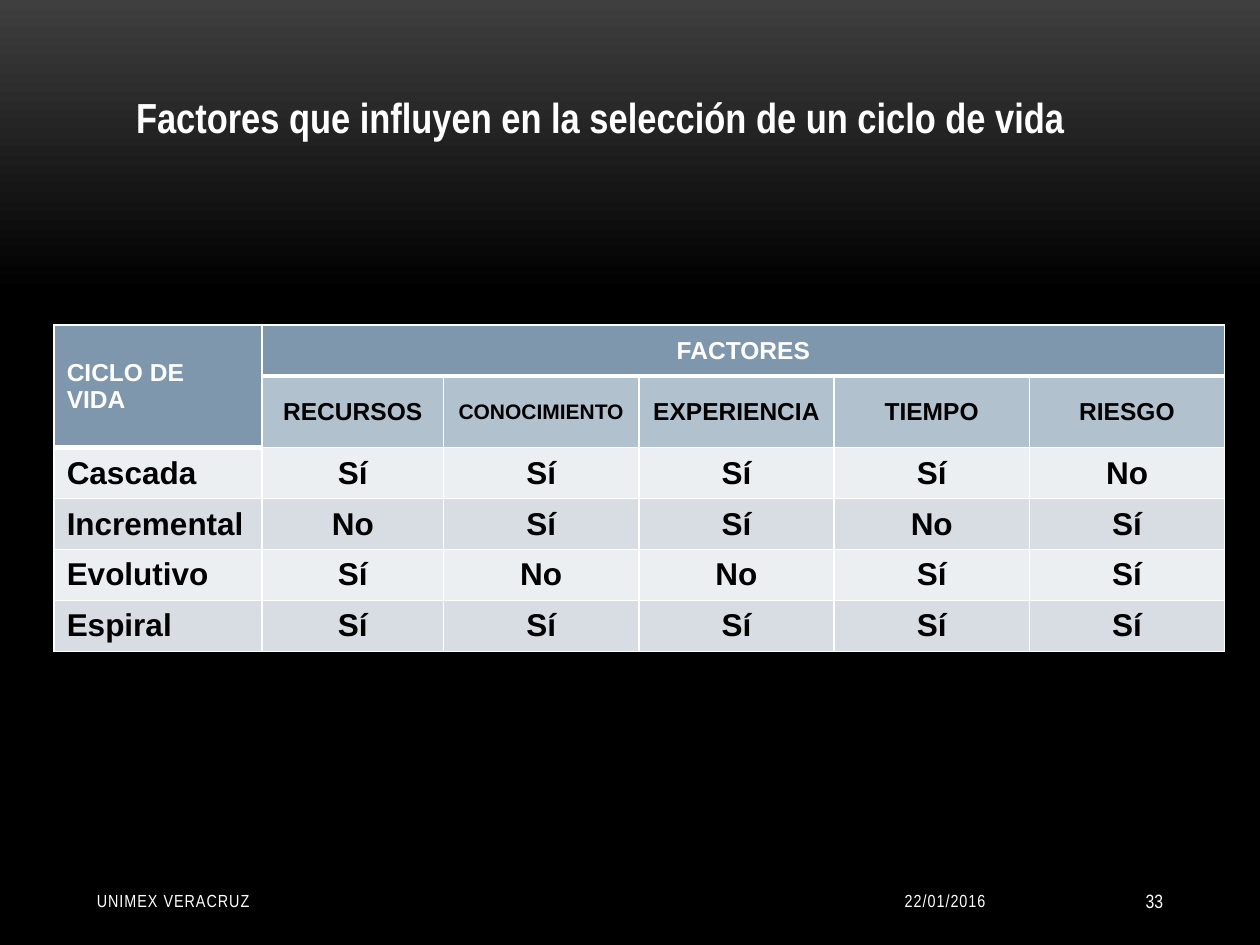
from lxml.etree import SubElement
from pptx import Presentation
from pptx.dml.color import RGBColor
from pptx.enum.text import MSO_ANCHOR, MSO_AUTO_SIZE, PP_ALIGN
from pptx.oxml.ns import qn
from pptx.util import Inches, Pt

COLORS = {
    "white": "FFFFFF",
    "black": "000000",
    "glow": "3F3F3F",
    "header": "7E97AD",
    "subheader": "B2C1CE",
    "light": "ECEFF1",
    "dark": "D8DDE3",
}
FACTORS = ["RECURSOS", "CONOCIMIENTO", "EXPERIENCIA", "TIEMPO", "RIESGO"]
LIFE_CYCLES = [
    ["Cascada", "Sí", "Sí", "Sí", "Sí", "No"],
    ["Incremental", "No", "Sí", "Sí", "No", "Sí"],
    ["Evolutivo", "Sí", "No", "No", "Sí", "Sí"],
    ["Espiral", "Sí", "Sí", "Sí", "Sí", "Sí"],
]
COLUMN_WIDTHS = [1.65, 1.44, 1.55, 1.55, 1.55, 1.55]


def rgb(name):
    return RGBColor.from_string(COLORS[name])


def write(frame, text, font_name, size, color, bold=False, align=PP_ALIGN.LEFT):
    frame.text = text
    paragraph = frame.paragraphs[0]
    paragraph.alignment = align
    font = paragraph.runs[0].font
    font.name = font_name
    font.size = Pt(size)
    font.bold = bold
    font.color.rgb = rgb(color)
    return font


def paint_background(slide):
    fill = slide.background.fill
    fill.gradient()
    fill.gradient_angle = 270
    for stop, (position, color) in zip(fill.gradient_stops, [(0, "glow"), (0.31, "black")]):
        stop.position = position
        stop.color.rgb = rgb(color)


def place_title(slide, left, top, width, height):
    title = slide.shapes.title
    title.left, title.top, title.width, title.height = map(Inches, (left, top, width, height))
    frame = title.text_frame
    frame.word_wrap = True
    frame.auto_size = MSO_AUTO_SIZE.SHAPE_TO_FIT_TEXT
    frame.vertical_anchor = MSO_ANCHOR.TOP
    write(frame, "Factores que influyen en la selección de un ciclo de vida",
          "Arial Narrow", 24, "white", bold=True)


def add_borders(cell, top_width, bottom_width):
    properties = cell._tc.get_or_add_tcPr()
    for side, width in (("L", 1), ("R", 1), ("T", top_width), ("B", bottom_width)):
        line = SubElement(properties, qn(f"a:ln{side}"), w=str(Pt(width)))
        solid = SubElement(line, qn("a:solidFill"))
        SubElement(solid, qn("a:srgbClr"), val=COLORS["white"])


def cell_style(row, column):
    if row == 0 or (row == 1 and column == 0):
        return "header", "white", 14
    if row == 1:
        return "subheader", "black", 12 if FACTORS[column - 1] == "CONOCIMIENTO" else 14
    return ("light", "dark")[row % 2], "black", 18


def place_factor_table(slide, left, top, width, height):
    rows = [["CICLO DE VIDA", "FACTORES", "", "", "", ""], ["", *FACTORS], *LIFE_CYCLES]
    table = slide.shapes.add_table(
        len(rows), len(COLUMN_WIDTHS), *map(Inches, (left, top, width, height))).table
    for column, column_width in zip(table.columns, COLUMN_WIDTHS):
        column.width = Inches(column_width)
    for r, labels in enumerate(rows):
        for c, label in enumerate(labels):
            cell = table.cell(r, c)
            header_end = 1 if c == 0 else 0
            add_borders(cell, 3 if r == header_end + 1 else 1, 3 if r == header_end else 1)
            background, color, size = cell_style(r, c)
            cell.fill.solid()
            cell.fill.fore_color.rgb = rgb(background)
            cell.vertical_anchor = MSO_ANCHOR.MIDDLE
            if label:
                write(cell.text_frame, label, "Arial", size, color, bold=True,
                      align=PP_ALIGN.CENTER if c else PP_ALIGN.LEFT)
    table.cell(0, 0).merge(table.cell(1, 0))
    table.cell(0, 1).merge(table.cell(0, len(COLUMN_WIDTHS) - 1))


def place_footer(slide, top, height):
    items = [
        ("22/01/2016", 6.25, 1.67, 10, PP_ALIGN.RIGHT, 60),
        ("UNIMEX VERACRUZ", 0.67, 3.17, 10, PP_ALIGN.LEFT, 60),
        ("33", 8.25, 1.08, 11, PP_ALIGN.RIGHT, 0),
    ]
    for text, left, width, size, align, spacing in items:
        frame = slide.shapes.add_textbox(*map(Inches, (left, top, width, height))).text_frame
        frame.word_wrap = True
        frame.vertical_anchor = MSO_ANCHOR.MIDDLE
        font = write(frame, text, "Arial Narrow", size, "white", align=align)
        if spacing:
            font._element.set("spc", str(spacing))


def main():
    presentation = Presentation()
    presentation.slide_width = Inches(10)
    presentation.slide_height = Inches(7.5)
    slide = presentation.slides.add_slide(presentation.slide_layouts[5])
    paint_background(slide)
    place_footer(slide, 6.95, 0.4)
    place_factor_table(slide, 0.43, 2.58, sum(COLUMN_WIDTHS), 2.43)
    place_title(slide, 0.98, 0.68, 7.64, 0.5)
    presentation.save("out.pptx")


if __name__ == "__main__":
    main()
